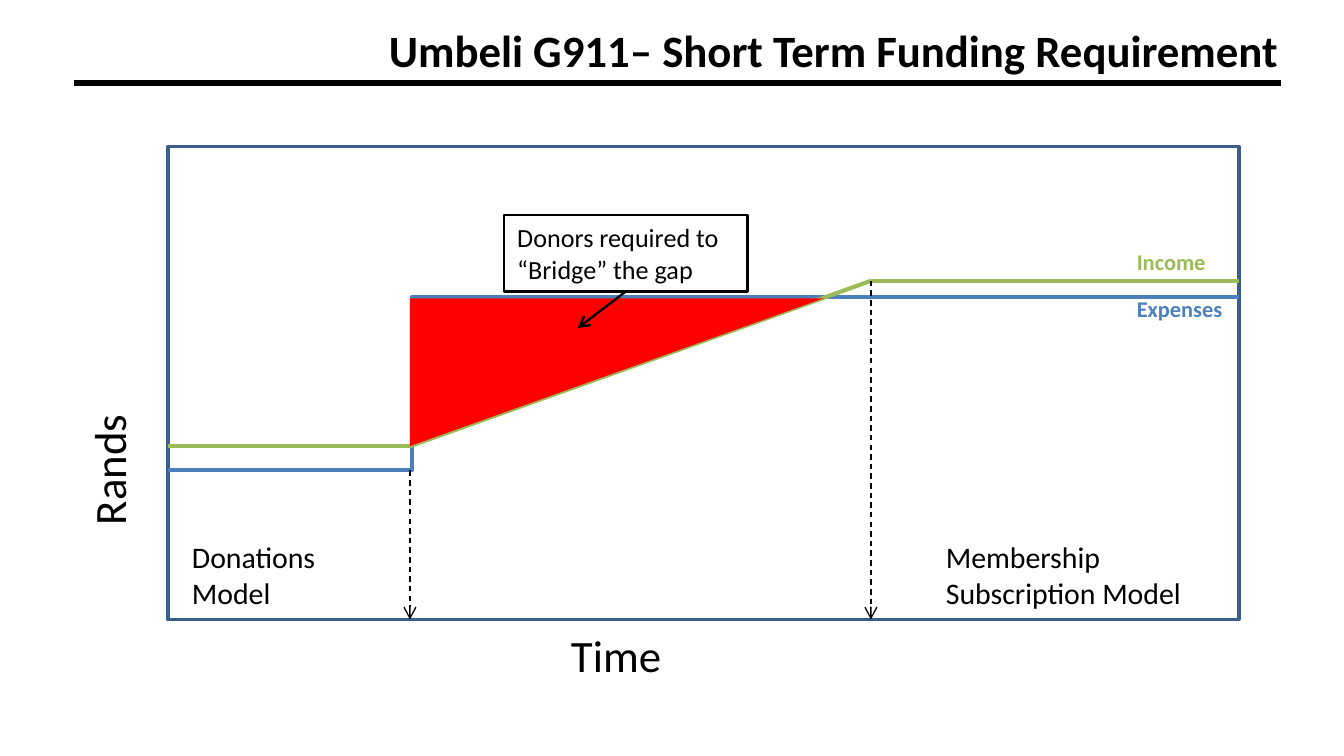
from lxml.etree import SubElement
from pptx import Presentation
from pptx.dml.color import RGBColor
from pptx.enum.dml import MSO_LINE
from pptx.enum.shapes import MSO_CONNECTOR as CONNECTOR, MSO_SHAPE as SHAPE
from pptx.enum.text import MSO_ANCHOR as ANCHOR, MSO_AUTO_SIZE as AUTO_SIZE, PP_ALIGN as ALIGN
from pptx.oxml.ns import qn
from pptx.util import Inches, Pt

BLACK = RGBColor(0x00, 0x00, 0x00)
RED = RGBColor(0xFF, 0x00, 0x00)
GREEN = RGBColor(0x9B, 0xBB, 0x59)
FRAME_BLUE = RGBColor(0x3A, 0x5F, 0x8C)
LINE_BLUE = RGBColor(0x4B, 0x7E, 0xBC)
TEXT_BLUE = RGBColor(0x4F, 0x81, 0xBD)

# Slide size: 16 to 9
SLIDE_WIDTH = 10
SLIDE_HEIGHT = SLIDE_WIDTH * 9 / 16

# Content
TITLE = "Umbeli G911– Short Term Funding Requirement"
CALLOUT = "Donors required to “Bridge” the gap"

# Plot frame and the levels inside it, in inches
LEFT, TOP, WIDTH, HEIGHT = 1.25, 1.09, 7.97, 3.52
RIGHT, BOTTOM = LEFT + WIDTH, TOP + HEIGHT
LAUNCH, STEADY = 3.05, 6.48  # moments on the time axis
INCOME_START, INCOME_END = 3.32, 2.09
EXPENSES_START, EXPENSES_END = 3.5, 2.21
STEP_SHARE = 0.228  # where expenses jump, as a share of the width

INCOME_POINTS = [(LEFT, INCOME_START), (LAUNCH, INCOME_START),
                 (STEADY, INCOME_END), (RIGHT, INCOME_END)]
MARKERS = [(LAUNCH, EXPENSES_START), (STEADY, INCOME_END)]
GAP_BOX = (LAUNCH, 2.22, 3.08, 1.1)
CALLOUT_BOX = (3.75, 1.6, 1.81, 0.57)

# Text, box, format
LABELS = [
    ("Rands", (0.4, 3.08, 1.08, 0.77), dict(size=24, rotation=270)),
    ("Time", (4.15, 4.62, 0.93, 0.77), dict(size=24)),
    ("Income", (8.36, 1.8, 0.72, 0.3), dict(size=12, color=GREEN, bold=True)),
    ("Expenses", (8.36, 2.15, 0.85, 0.3), dict(size=12, color=TEXT_BLUE, bold=True)),
    ("Donations\nModel", (1.33, 3.96, 1.81, 0.64), dict(size=16, wrap=True)),
    ("Membership\nSubscription Model", (6.94, 3.96, 1.97, 0.64), dict(size=16)),
]


def inches(values):
    return [Inches(value) for value in values]


def write(shape, text, size, color=BLACK, bold=False, align=ALIGN.LEFT,
          wrap=False, anchor=ANCHOR.TOP, rotation=0):
    shape.rotation = rotation
    frame = shape.text_frame
    frame.text = text
    frame.word_wrap = wrap
    frame.auto_size = AUTO_SIZE.NONE
    frame.vertical_anchor = anchor
    for paragraph in frame.paragraphs:
        paragraph.alignment = align
        for run in paragraph.runs:
            font = run.font
            font.name, font.size, font.bold = "Calibri", Pt(size), bold
            font.color.rgb = color


def add_box(shapes, kind, box, fill=None, line=None, width=1):
    shape = shapes.add_shape(kind, *inches(box))
    shape.shadow.inherit = False
    for part, color in ((shape.fill, fill), (shape.line.fill, line)):
        if color is None:
            part.background()
        else:
            part.solid()
            part.fore_color.rgb = color
    if line is not None:
        shape.line.width = Pt(width)
    return shape


def add_line(shapes, start, end, color, width, kind=CONNECTOR.STRAIGHT,
             dashed=False, arrow=False):
    connector = shapes.add_connector(kind, *inches(start + end))
    connector.line.color.rgb = color
    connector.line.width = Pt(width)
    if dashed:
        connector.line.dash_style = MSO_LINE.DASH
    if arrow:
        SubElement(connector.line._get_or_add_ln(), qn("a:tailEnd"), type="arrow")
    SubElement(connector._element.spPr, qn("a:effectLst"))
    return connector


def main():
    presentation = Presentation()
    presentation.slide_width = Inches(SLIDE_WIDTH)
    presentation.slide_height = Inches(SLIDE_HEIGHT)
    slide = presentation.slides.add_slide(presentation.slide_layouts[5])
    shapes = slide.shapes

    # Title and its rule
    title = shapes.title
    title.left, title.top, title.width, title.height = inches((2.19, 0.12, 7.42, 0.5))
    write(title, TITLE, 24, bold=True, align=ALIGN.RIGHT, wrap=True)
    add_line(shapes, (0.55, 0.62), (9.53, 0.62), BLACK, 3)

    # Plot frame
    add_box(shapes, SHAPE.RECTANGLE, (LEFT, TOP, WIDTH, HEIGHT), line=FRAME_BLUE, width=2)

    # Expenses: one step up
    expenses = add_line(shapes, (LEFT, EXPENSES_START), (RIGHT, EXPENSES_END),
                        LINE_BLUE, 2.25, kind=CONNECTOR.ELBOW)
    adjustments = expenses._element.spPr.find(qn("a:prstGeom")).get_or_add_avLst()
    SubElement(adjustments, qn("a:gd"), name="adj1", fmla=f"val {round(STEP_SHARE * 100000)}")

    # Income: flat, rising, flat
    for start, end in zip(INCOME_POINTS, INCOME_POINTS[1:]):
        add_line(shapes, start, end, GREEN, 2.25)

    # Funding gap, with its right angle at the top left
    gap = add_box(shapes, SHAPE.RIGHT_TRIANGLE, GAP_BOX, fill=RED)
    gap._element.spPr.find(qn("a:xfrm")).set("flipV", "1")

    # Markers down to the time axis
    for x, y in MARKERS:
        add_line(shapes, (x, y), (x, BOTTOM), BLACK, 0.75, dashed=True, arrow=True)

    # Callout pointing at the gap
    callout = add_box(shapes, SHAPE.RECTANGLE, CALLOUT_BOX, line=BLACK, width=1.5)
    write(callout, CALLOUT, 14, wrap=True, anchor=ANCHOR.TOP)
    pointer = add_line(shapes, (4.65, 2.17), (4.3, 2.44), BLACK, 1.25, arrow=True)
    pointer.begin_connect(callout, 2)

    # Labels
    for text, box, style in LABELS:
        write(shapes.add_textbox(*inches(box)), text, **style)

    presentation.save("out.pptx")


if __name__ == "__main__":
    main()
